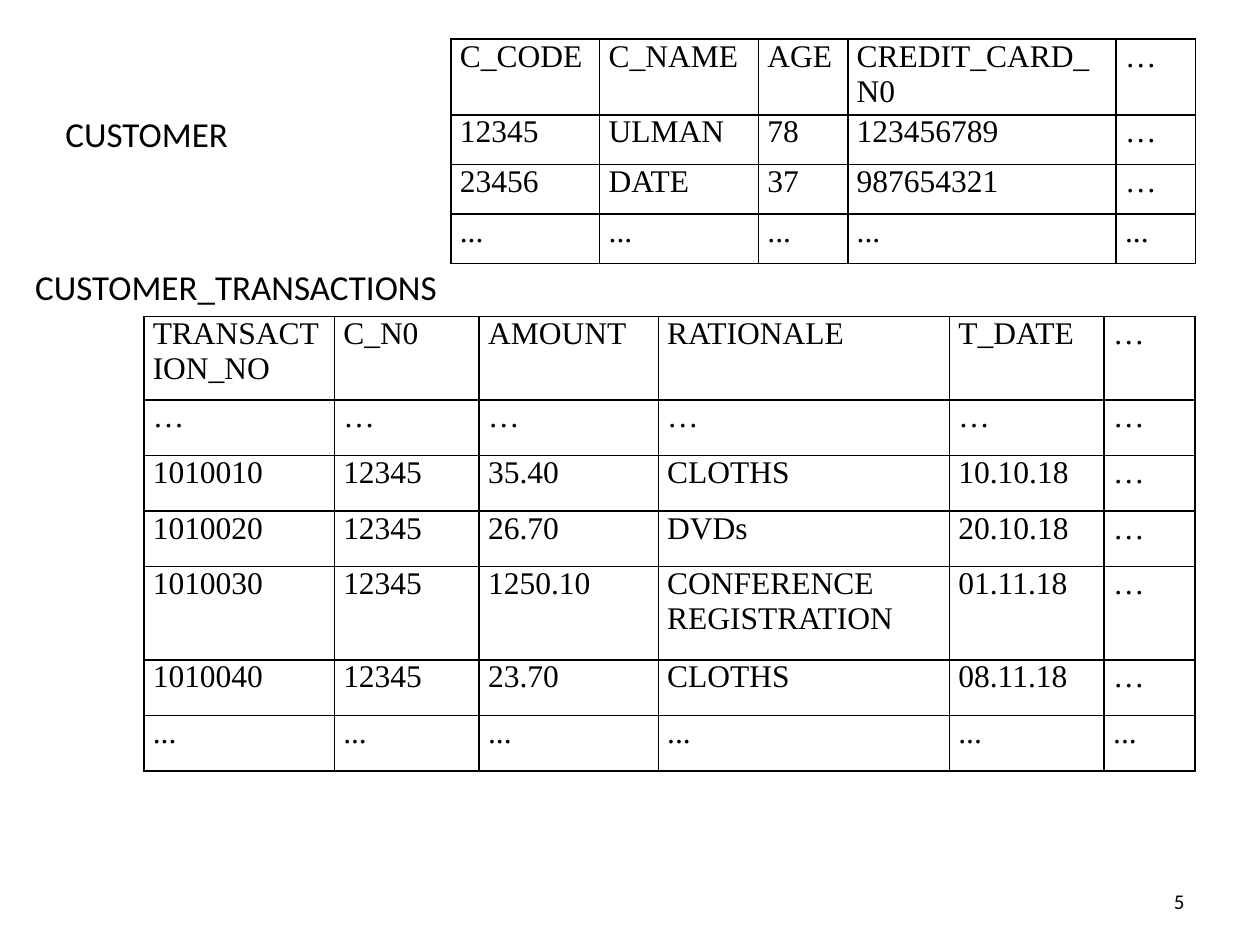
from lxml.etree import SubElement
from pptx import Presentation
from pptx.dml.color import RGBColor
from pptx.enum.text import MSO_ANCHOR, PP_ALIGN
from pptx.oxml.ns import qn
from pptx.util import Cm, Pt

BLACK = RGBColor(0, 0, 0)
SERIF, SANS = "Times New Roman", "Calibri"

LABELS = [
    ("CUSTOMER", (0.71, 2.13, 4.8, 1.12), 20, PP_ALIGN.LEFT, 0.61),
    ("CUSTOMER_TRANSACTIONS", (0.1, 5.21, 9.4, 1.12), 20, PP_ALIGN.LEFT, 0.61),
    ("5", (18.21, 17.65, 5.92, 1.02), 12, PP_ALIGN.RIGHT, 0.25),
]

TABLES = [
    {
        "at": (2.9, 6.38),
        "cols": (3.84, 2.92, 3.61, 5.87, 3.12, 1.83),
        "rows": (1.68, 1.12, 1.12, 1.12, 1.88, 1.12, 1.12),
        "data": [
            ("TRANSACTION_NO", "C_N0", "AMOUNT", "RATIONALE", "T_DATE", "…"),
            ("…",) * 6,
            ("1010010", "12345", "35.40", "CLOTHS", "10.10.18", "…"),
            ("1010020", "12345", "26.70", "DVDs", "20.10.18", "…"),
            ("1010030", "12345", "1250.10", "CONFERENCE REGISTRATION", "01.11.18", "…"),
            ("1010040", "12345", "23.70", "CLOTHS", "08.11.18", "…"),
            ("...",) * 6,
        ],
    },
    {
        "at": (9.09, 0.79),
        "cols": (3, 3.2, 1.8, 5.41, 1.6),
        "rows": (1.5, 1, 1, 1),
        "data": [
            ("C_CODE", "C_NAME", "AGE", "CREDIT_CARD_N0", "…"),
            ("12345", "ULMAN", "78", "123456789", "…"),
            ("23456", "DATE", "37", "987654321", "…"),
            ("...",) * 5,
        ],
    },
]


def write(frame, text, size=18, font=SERIF, align=PP_ALIGN.JUSTIFY):
    frame.word_wrap = True
    para = frame.paragraphs[0]
    para.alignment = align
    run = para.add_run()
    run.text = text
    run.font.size = Pt(size)
    run.font.name = font
    run.font.bold = False
    run.font.color.rgb = BLACK


def border(cell):
    props = cell._tc.get_or_add_tcPr()
    for side in ("lnL", "lnR", "lnT", "lnB"):
        line = SubElement(props, qn(f"a:{side}"), w=str(Pt(1)))
        fill = SubElement(line, qn("a:solidFill"))
        SubElement(fill, qn("a:srgbClr"), val=str(BLACK))


def add_label(slide, text, spot, size, align, inset):
    frame = slide.shapes.add_textbox(*map(Cm, spot)).text_frame
    frame.vertical_anchor = MSO_ANCHOR.MIDDLE
    frame.margin_left = Cm(inset)
    write(frame, text, size=size, font=SANS, align=align)


def add_grid(slide, at, cols, rows, data):
    size = sum(cols), sum(rows)
    table = slide.shapes.add_table(len(rows), len(cols), *map(Cm, at + size)).table
    table.first_row = table.horz_banding = False
    for col, width in zip(table.columns, cols):
        col.width = Cm(width)
    for row, height, texts in zip(table.rows, rows, data):
        row.height = Cm(height)
        for cell, text in zip(row.cells, texts):
            cell.margin_left = cell.margin_right = Cm(0.18)
            cell.margin_top = cell.margin_bottom = 0
            border(cell)
            cell.fill.background()
            write(cell.text_frame, text)


def main():
    deck = Presentation()
    deck.slide_width, deck.slide_height = Cm(25.4), Cm(19.05)
    slide = deck.slides.add_slide(deck.slide_layouts[6])
    for label in LABELS:
        add_label(slide, *label)
    for grid in TABLES:
        add_grid(slide, **grid)
    deck.save("out.pptx")


if __name__ == "__main__":
    main()
